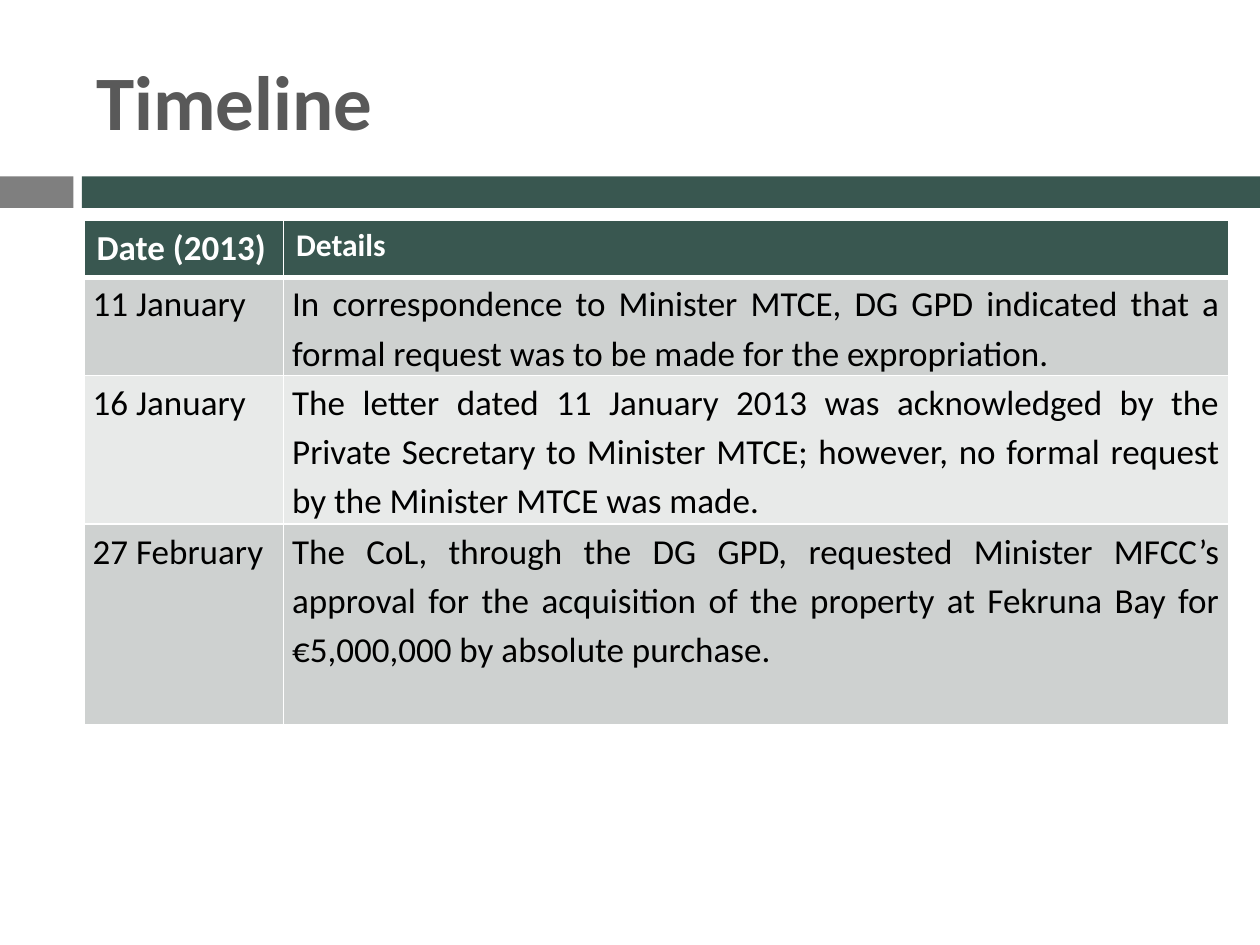
import pptx
import pptx.util
import pptx.dml.color
import pptx.enum.shapes
import pptx.enum.text
import pptx.oxml
import pptx.oxml.ns
from lxml import etree

Pt = pptx.util.Pt
ALIGN = pptx.enum.text.PP_ALIGN
ANCHOR = pptx.enum.text.MSO_ANCHOR

GREEN, GREY, TITLE_GREY = "395750", "7F7F7F", "595959"
WHITE, BLACK = "FFFFFF", "000000"
BANDS = ("CED1D0", "E8EAE9")

HEADINGS = (("Date (2013)", 20), ("Details", 18))
EVENTS = (
    ("11 January", "In correspondence to Minister MTCE, DG GPD indicated that a "
     "formal request was to be made for the expropriation."),
    ("16 January", "The letter dated 11 January 2013 was acknowledged by the "
     "Private Secretary to Minister MTCE; however, no formal request by the "
     "Minister MTCE was made."),
    ("27 February", "The CoL, through the DG GPD, requested Minister MFCC’s "
     "approval for the acquisition of the property at Fekruna Bay for "
     "€5,000,000 by absolute purchase."),
)


def color(value):
    return pptx.dml.color.RGBColor.from_string(value)


class SlideBuilder:
    font = "Calibri"

    def __init__(self, page):
        self.page = page

    def set_text(self, frame, text, size, ink, bold=False, align=ALIGN.LEFT, spacing=None):
        frame.text = text
        para = frame.paragraphs[0]
        para.alignment = align
        para.line_spacing = spacing
        span = para.runs[0]
        span.font.name = self.font
        span.font.size = Pt(size)
        span.font.bold = bold
        span.font.color.rgb = color(ink)

    def bar(self, left, top, width, height, fill):
        shape = self.page.shapes.add_shape(
            pptx.enum.shapes.MSO_SHAPE.RECTANGLE,
            Pt(left), Pt(top), Pt(width), Pt(height))
        shape.shadow.inherit = False
        shape.fill.solid()
        shape.fill.fore_color.rgb = color(fill)
        shape.line.fill.background()

    def title(self, text, left, top, width, height):
        box = self.page.shapes.add_textbox(Pt(left), Pt(top), Pt(width), Pt(height))
        frame = box.text_frame
        frame.word_wrap = True
        frame.vertical_anchor = ANCHOR.MIDDLE
        self.set_text(frame, text, 44, TITLE_GREY, bold=True)

    def table(self, left, top, widths, heights):
        frame = self.page.shapes.add_table(
            len(heights), len(widths), Pt(left), Pt(top),
            Pt(sum(widths)), Pt(sum(heights)))
        table = frame.table
        for column, width in zip(table.columns, widths):
            column.width = Pt(width)
        for row, height in zip(table.rows, heights):
            row.height = Pt(height)
        return table

    def cell(self, cell, fill, edges):
        """Fill a cell and draw white edges, given as side: width."""
        properties = cell._tc.get_or_add_tcPr()
        for side, width in edges.items():
            line = etree.SubElement(
                properties, pptx.oxml.ns.qn("a:ln" + side), w=str(Pt(width)))
            paint = etree.SubElement(line, pptx.oxml.ns.qn("a:solidFill"))
            etree.SubElement(paint, pptx.oxml.ns.qn("a:srgbClr"), val=WHITE)
        cell.fill.solid()
        cell.fill.fore_color.rgb = color(fill)

    def header_cell(self, cell, text, size):
        self.cell(cell, GREEN, {"L": 1, "R": 1, "T": 1, "B": 3})
        self.set_text(cell.text_frame, text, size, WHITE, bold=True, align=ALIGN.JUSTIFY)

    def body_cell(self, cell, text, fill, align, top_edge):
        self.cell(cell, fill, {"L": 1, "R": 1, "T": top_edge, "B": 1})
        cell.margin_left = cell.margin_right = Pt(5)
        cell.margin_top = cell.margin_bottom = Pt(0)
        self.set_text(cell.text_frame, text, 20, BLACK, align=align, spacing=1.15)


def main():
    deck = pptx.Presentation()
    deck.slide_width, deck.slide_height = Pt(720), Pt(540)
    builder = SlideBuilder(deck.slides.add_slide(deck.slide_layouts[6]))

    # Divider bars and title
    builder.bar(0, 100.8, 42, 18, GREY)
    builder.bar(46.8, 100.8, 673.2, 18, GREEN)
    builder.title("Timeline", 48, 18, 642, 78)

    # Timeline table
    table = builder.table(48, 126, (114, 540), (32.4, 56.2, 85, 114.4))
    for column, (text, size) in enumerate(HEADINGS):
        builder.header_cell(table.cell(0, column), text, size)
    for row, event in enumerate(EVENTS, start=1):
        fill = BANDS[(row - 1) % 2]
        top_edge = 3 if row == 1 else 1
        for column, align in enumerate((ALIGN.LEFT, ALIGN.JUSTIFY)):
            builder.body_cell(table.cell(row, column), event[column], fill, align, top_edge)

    deck.save("out.pptx")


if __name__ == "__main__":
    main()
